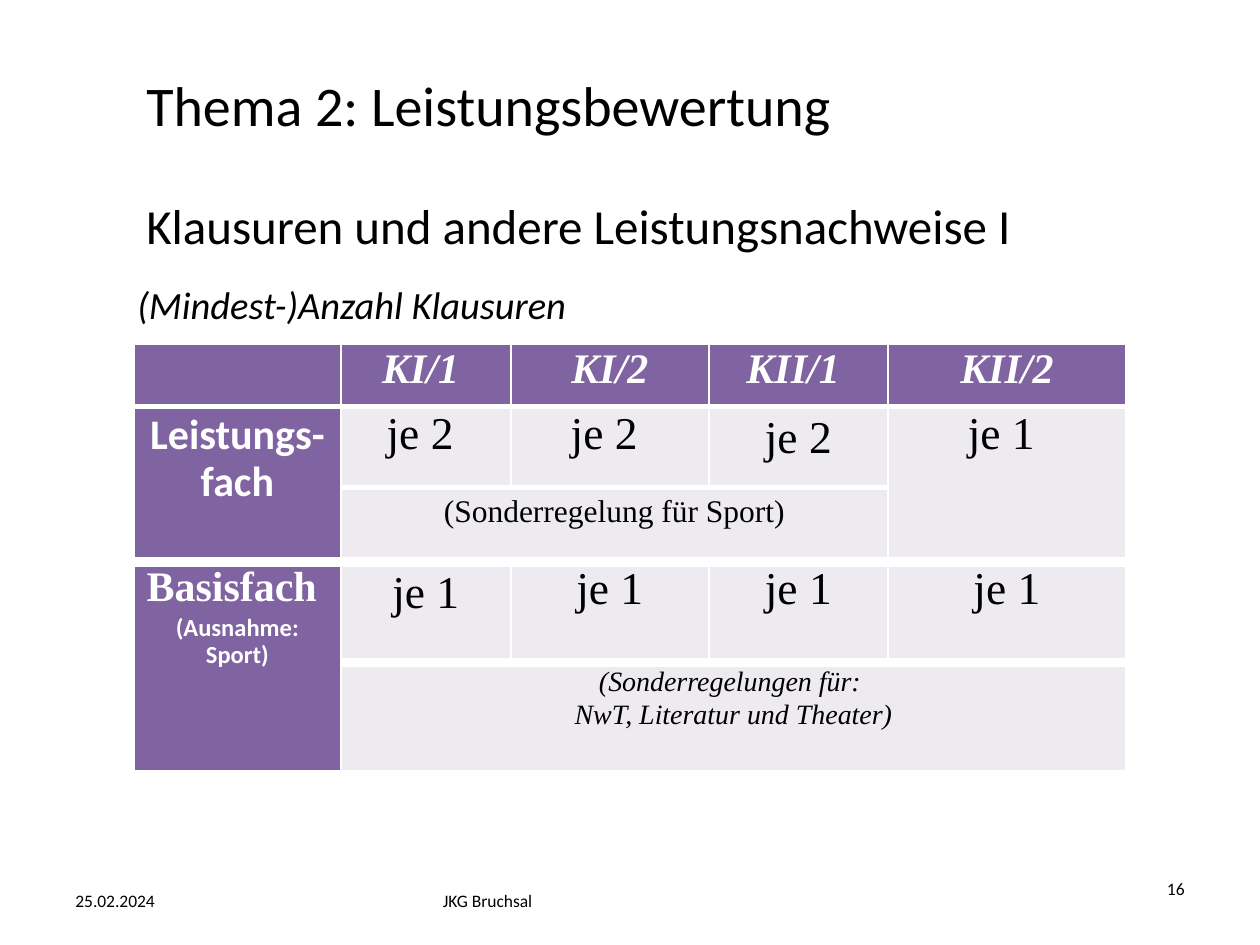
from lxml.etree import SubElement
from pptx import Presentation
from pptx.dml.color import RGBColor
from pptx.enum.text import MSO_ANCHOR as Anchor, PP_ALIGN as Align
from pptx.oxml.ns import qn
from pptx.util import Cm, Pt

COLORS = {"text": "000000", "line": "FFFFFF", "head": "8064A2", "body": "EDEAF0"}

# Text formats
SANS, SERIF = {"name": "Calibri"}, {"name": "Times New Roman"}
FORMATS = {
    "theme": {**SANS, "size": Pt(32)},
    "topic": {**SANS, "size": Pt(28)},
    "caption": {**SANS, "size": Pt(22), "italic": True},
    "footer": {**SANS, "size": Pt(10)},
    "term": {**SERIF, "size": Pt(24), "bold": True, "italic": True},
    "subject": {**SANS, "size": Pt(24), "bold": True},
    "basic": {**SERIF, "size": Pt(24), "bold": True},
    "exception": {**SANS, "size": Pt(14), "bold": True},
    "count": {**SERIF, "size": Pt(26)},
    "sport": {**SERIF, "size": Pt(18)},
    "special": {**SERIF, "size": Pt(16), "italic": True},
}

# Text, format, (left, top, width, height) in cm, alignment
TEXTS = [
    ("Thema 2: Leistungsbewertung", "theme", (2.7, 0.7, 20, 2.8), Align.LEFT),
    ("Klausuren und andere Leistungsnachweise I", "topic", (2.7, 3.53, 22.2, 2), Align.LEFT),
    ("25.02.2024", "footer", (1.27, 17.65, 5.93, 1.01), Align.LEFT),
    ("JKG Bruchsal", "footer", (8.68, 17.65, 8.04, 1.01), Align.LEFT),
    ("16", "footer", (18.2, 17.4, 5.93, 1.01), Align.RIGHT),
]
CAPTION = ("(Mindest-)Anzahl Klausuren", "caption", (1.27, 5.54, 20.4, 1.2), Align.LEFT)

# Table content: (row, column) -> (text, format) for each paragraph
TERMS = ["KI/1 ", "KI/2", "KII/1 ", "KII/2"]
ADVANCED_COUNTS = ["je 2 ", "je 2 ", "je 2", "je 1 "]
BASIC_COUNTS = ["je 1"] * 4
CELLS = {
    (1, 0): [("Leistungs-fach", "subject")],
    (2, 1): [("(Sonderregelung für Sport)", "sport")],
    (3, 0): [("Basisfach", "basic"), ("(Ausnahme: Sport)", "exception")],
    (4, 1): [("(Sonderregelungen für: ", "special"),
             ("NwT, Literatur und Theater)", "special")],
}
for row, entries, style in [(0, TERMS, "term"), (1, ADVANCED_COUNTS, "count"),
                            (3, BASIC_COUNTS, "count")]:
    for column, entry in enumerate(entries, 1):
        CELLS[row, column] = [(entry, style)]

SINGLE_SPACED = {(1, 3), (2, 1), (3, 1)}
MERGES = [((1, 0), (2, 0)), ((1, 4), (2, 4)), ((2, 1), (2, 3)),
          ((3, 0), (4, 0)), ((4, 1), (4, 4))]
TABLE_AT = (2.7, 6.93)
COLUMN_WIDTHS = [4.17, 3.43, 3.99, 3.61, 4.8]
ROW_HEIGHTS = [1.27, 1.63, 1.5, 2.03, 2.18]
RULES = [1, 3, 0, 6, 0, 1]  # widths in points above each row and below the last
PLAIN_STYLE = "{2D5ABB26-0587-4C30-8999-92F81FD0307C}"


def write(paragraph, text, style, color, align):
    paragraph.alignment = align
    run = paragraph.add_run()
    run.text = text
    for key, value in FORMATS[style].items():
        setattr(run.font, key, value)
    run.font.color.rgb = RGBColor.from_string(COLORS[color])


def space_before(paragraph, percent):
    before = paragraph._p.get_or_add_pPr()._add_spcBef()
    SubElement(before, qn("a:spcPct")).set("val", str(percent * 1000))


def add_text(slide, text, style, box, align):
    frame = slide.shapes.add_textbox(*map(Cm, box)).text_frame
    frame.word_wrap = True
    frame.vertical_anchor = Anchor.MIDDLE
    write(frame.paragraphs[0], text, style, "text", align)
    return frame


def add_border(cell, side, width):
    border = SubElement(cell._tc.get_or_add_tcPr(), qn(f"a:ln{side}"), w=str(Pt(width)))
    fill = SubElement(border, qn("a:solidFill"))
    SubElement(fill, qn("a:srgbClr")).set("val", COLORS["line"])


def add_grades_table(slide):
    frame = slide.shapes.add_table(
        len(ROW_HEIGHTS), len(COLUMN_WIDTHS), *map(Cm, TABLE_AT),
        Cm(sum(COLUMN_WIDTHS)), Cm(sum(ROW_HEIGHTS)))
    table = frame.table
    table._tbl.tblPr.find(qn("a:tableStyleId")).text = PLAIN_STYLE
    for column, width in zip(table.columns, COLUMN_WIDTHS):
        column.width = Cm(width)
    for row, height in zip(table.rows, ROW_HEIGHTS):
        row.height = Cm(height)
    for first, last in MERGES:
        table.cell(*first).merge(table.cell(*last))

    for row in range(len(ROW_HEIGHTS)):
        for column in range(len(COLUMN_WIDTHS)):
            cell = table.cell(row, column)
            # Borders come before the fill in the cell properties
            if not cell.is_spanned:
                bottom = row + (cell.span_height if cell.is_merge_origin else 1)
                widths = {"L": 1, "R": 1, "T": RULES[row], "B": RULES[bottom]}
                for side, width in widths.items():
                    if width:
                        add_border(cell, side, width)
            is_head = row == 0 or column == 0
            cell.fill.solid()
            cell.fill.fore_color.rgb = RGBColor.from_string(COLORS["head" if is_head else "body"])

            for index, (text, style) in enumerate(CELLS.get((row, column), [])):
                lines = cell.text_frame
                paragraph = lines.add_paragraph() if index else lines.paragraphs[0]
                align = Align.LEFT if style == "basic" else Align.CENTER
                write(paragraph, text, style, "line" if is_head else "text", align)
                if (row, column) not in SINGLE_SPACED:
                    paragraph.line_spacing = 0.9
                    space_before(paragraph, 20)


def main():
    deck = Presentation()
    deck.slide_width, deck.slide_height = Cm(25.4), Cm(19.05)
    slide = deck.slides.add_slide(deck.slide_layouts[6])

    # Headings and footer
    for entry in TEXTS:
        add_text(slide, *entry)

    # Table with its caption
    caption = add_text(slide, *CAPTION)
    caption.vertical_anchor = Anchor.TOP
    caption_line = caption.paragraphs[0]
    caption_line._p.get_or_add_pPr().set("marL", str(Cm(1.25)))
    space_before(caption_line, 20)
    caption_line.space_after = Pt(12)
    add_grades_table(slide)

    deck.save("out.pptx")


if __name__ == "__main__":
    main()
